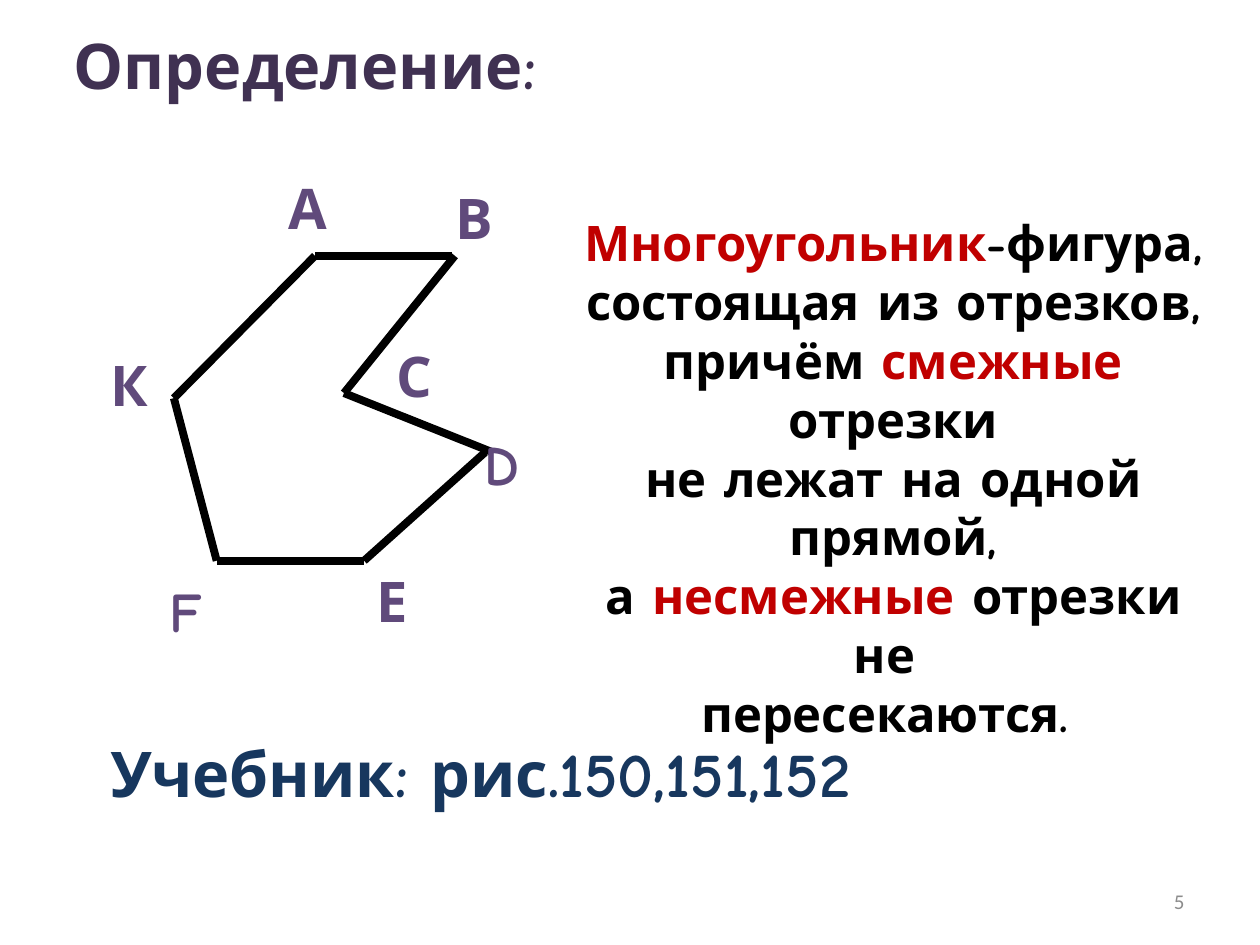
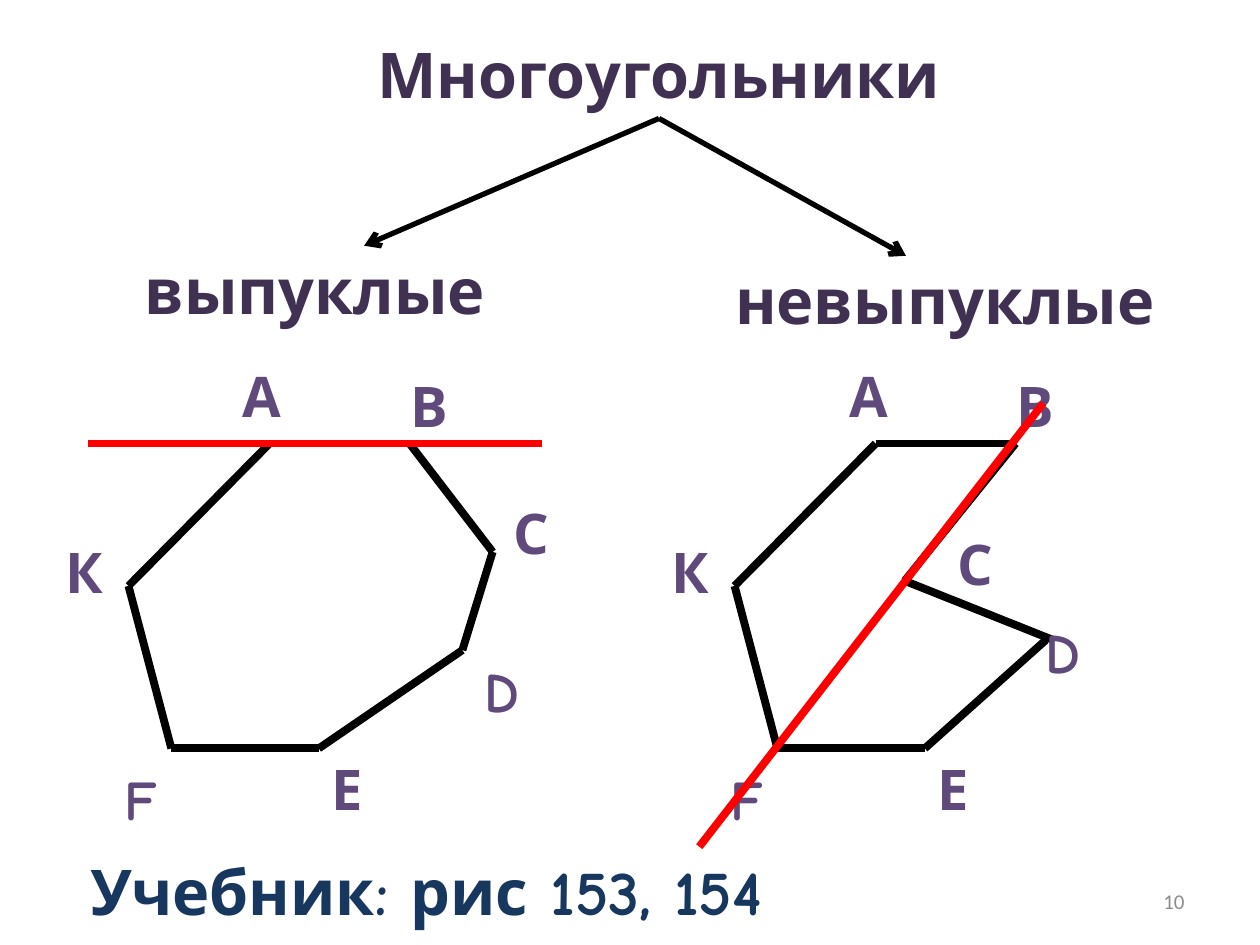
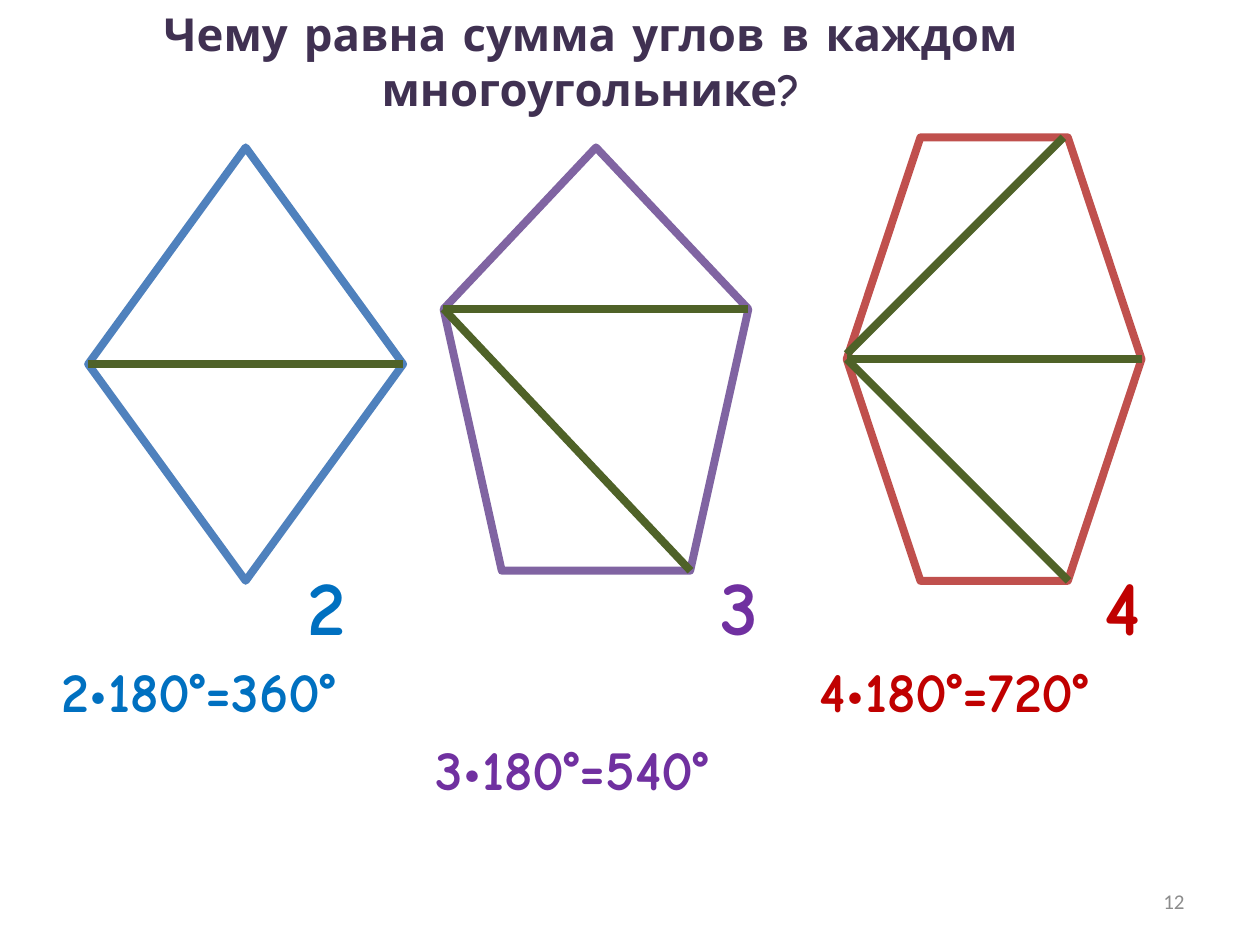
from lxml.etree import SubElement
from pptx import Presentation
from pptx.dml.color import RGBColor
from pptx.enum.shapes import MSO_CONNECTOR, MSO_SHAPE
from pptx.enum.text import MSO_ANCHOR, MSO_AUTO_SIZE, PP_ALIGN
from pptx.oxml.ns import qn
from pptx.util import Inches, Pt

# Shared style
FONT = "Comic Neue"
TITLE, LETTER, BOOK = "403152", "604A7B", "17375E"
BLACK, WHITE, RED, GREY = "000000", "FFFFFF", "C00000", "8C8C8C"
SECANT, DIAGONAL = "FF0000", "4F6228"
THICK, THIN = 4.5, 3

# Polygon content, in the coordinates of the first slide
SHARED_EDGES = [((2.5, 2.03), (1.38, 3.16)), ((1.38, 3.16), (1.72, 4.45)),
                ((1.72, 4.45), (2.89, 4.45))]
CONCAVE_EDGES = SHARED_EDGES + [
    ((2.89, 4.45), (3.85, 3.59)), ((3.91, 3.59), (2.73, 3.12)),
    ((2.5, 2.03), (3.59, 2.03)), ((3.61, 2.03), (2.73, 3.12))]
CONVEX_EDGES = SHARED_EDGES + [
    ((2.89, 4.45), (4.03, 3.67)), ((4.03, 3.67), (4.27, 2.89)),
    ((2.47, 2.03), (3.64, 2.03)), ((3.61, 2.03), (4.27, 2.89))]
SHARED_LETTERS = {"А": (2.19, 1.33), "В": (3.52, 1.41), "Е": (2.89, 4.45),
                  "F": (1.25, 4.53), "К": (0.78, 2.73)}
CONCAVE_LETTERS = SHARED_LETTERS | {"С": (3.05, 2.66), "D": (3.75, 3.36)}
CONVEX_LETTERS = SHARED_LETTERS | {"С": (4.34, 2.42), "D": (4.11, 3.67)}
LETTER_WIDTHS = {"А": 0.53, "D": 0.53, "F": 0.47, "К": 0.49}

DEFINITION = [
    [("Многоугольник", RED), ("-фигура,", BLACK)],
    [("состоящая из отрезков,", BLACK)],
    [("причём ", BLACK), ("смежные ", RED), ("отрезки", BLACK)],
    [("не лежат на одной прямой,", BLACK)],
    [("а ", BLACK), ("несмежные", RED), (" отрезки не ", BLACK)],
    [("пересекаются. ", BLACK)],
]

# Classification: heading, its box, arrow tip
KINDS = [("выпуклые", (0.47, 1.95), (2.89, 1.95)),
         ("невыпуклые", (5.47, 2.03), (7.19, 2.03))]
ARROW_START = (5.23, 0.94)
SECANTS = [((0.7, 3.52), (4.3, 3.52)), ((5.55, 6.72), (8.28, 3.2))]

# Angle sums: preset, box, outline, text colour, triangles, count x, sum place
FIGURES = [
    (MSO_SHAPE.DIAMOND, (0.7, 1.17, 2.5, 3.44), "4F81BD", "0070C0", 2, 2.34, (0.39, 5.16)),
    (MSO_SHAPE.REGULAR_PENTAGON, (3.52, 1.17, 2.42, 3.36), "8064A2", "7030A0", 3, 5.62,
     (3.36, 5.78)),
    (MSO_SHAPE.HEXAGON, (6.72, 1.09, 2.34, 3.52), "C0504D", RED, 4, 8.67, (6.41, 5.16)),
]
DIAGONALS = [((0.7, 2.89), (3.2, 2.89)),
             ((3.52, 2.45), (5.94, 2.45)), ((3.52, 2.45), (5.48, 4.53)),
             ((6.72, 2.81), (8.44, 1.09)), ((6.72, 2.85), (9.06, 2.85)),
             ((6.72, 2.85), (8.48, 4.61))]


def rgb(value):
    return RGBColor.from_string(value)


def add_text(s, box, paragraphs, size, color=BLACK, align=None, wrap=True,
             font=FONT, bold=True, grow=True):
    """Paragraphs are a string or lists of (text, colour) runs."""
    if isinstance(paragraphs, str):
        paragraphs = [[(paragraphs, color)]]
    tf = s.shapes.add_textbox(*map(Inches, box)).text_frame
    tf.word_wrap = wrap
    if grow:
        tf.auto_size = MSO_AUTO_SIZE.SHAPE_TO_FIT_TEXT
    else:
        tf.vertical_anchor = MSO_ANCHOR.MIDDLE
    for i, runs in enumerate(paragraphs):
        p = tf.add_paragraph() if i else tf.paragraphs[0]
        p.alignment = align
        p.font.name, p.font.size, p.font.bold = font, Pt(size), bold
        for text, run_color in runs:
            r = p.add_run()
            r.text = text
            r.font.color.rgb = rgb(run_color)


def add_heading(s, box, text, size=36):
    add_text(s, box, text, size, TITLE, PP_ALIGN.CENTER)


def add_line(s, start, end, color=BLACK, width=THICK, arrow=False):
    line = s.shapes.add_connector(MSO_CONNECTOR.STRAIGHT, *map(Inches, start + end))
    line.line.color.rgb = rgb(color)
    line.line.width = Pt(width)
    if arrow:
        SubElement(line.line._get_or_add_ln(), qn("a:tailEnd"), type="arrow")
    SubElement(line._element.spPr, qn("a:effectLst"))


def add_polygon(s, edges, letters, dx=0, dy=0):
    for (x1, y1), (x2, y2) in edges:
        add_line(s, (x1 + dx, y1 + dy), (x2 + dx, y2 + dy))
    for letter, (x, y) in letters.items():
        box = (x + dx, y + dy, LETTER_WIDTHS.get(letter, 0.48), 0.64)
        add_text(s, box, letter, 32, LETTER, wrap=False)


def add_slide(prs, number):
    s = prs.slides.add_slide(prs.slide_layouts[6])
    add_text(s, (7.17, 6.95, 2.33, 0.4), number, 12, GREY, PP_ALIGN.RIGHT,
             font="Calibri", bold=False, grow=False)
    return s


def definition_slide(prs):
    s = add_slide(prs, "5")
    add_heading(s, (0.31, 0.16, 4.22, 0.71), "Определение:")
    add_polygon(s, CONCAVE_EDGES, CONCAVE_LETTERS)
    add_text(s, (4.45, 1.64, 5.28, 3.4), DEFINITION, 28, align=PP_ALIGN.CENTER)
    add_text(s, (0.78, 5.78, 7.97, 0.71), "Учебник: рис.150,151,152", 36, BOOK)


def kinds_slide(prs):
    s = add_slide(prs, "10")
    add_heading(s, (1.48, 0.23, 7.5, 0.71), "Многоугольники")
    for name, place, tip in KINDS:
        add_line(s, ARROW_START, tip, width=THIN, arrow=True)
        add_heading(s, place + (4.06, 0.71), name)
    add_polygon(s, CONCAVE_EDGES, CONCAVE_LETTERS, 4.45, 1.49)
    add_polygon(s, CONVEX_EDGES, CONVEX_LETTERS, -0.36, 1.49)
    for start, end in SECANTS:
        add_line(s, start, end, SECANT)
    add_text(s, (0.62, 6.72, 6.25, 0.71), "Учебник: рис 153, 154", 36, BOOK)


def angle_sum_slide(prs):
    s = add_slide(prs, "12")
    add_heading(s, (0.16, 0, 9.06, 0.98),
                "Чему равна сумма углов в каждом многоугольнике?", 26)
    for preset, box, outline, color, count, count_x, sum_place in FIGURES:
        figure = s.shapes.add_shape(preset, *map(Inches, box))
        figure.shadow.inherit = False
        figure.fill.solid()
        figure.fill.fore_color.rgb = rgb(WHITE)
        figure.line.color.rgb = rgb(outline)
        figure.line.width = Pt(THICK)
        add_text(s, (count_x, 4.38, 0.86, 0.84), str(count), 44, color)
        add_text(s, sum_place + (3.2, 0.64), f"{count}•180°={count * 180}°", 32, color)
    for start, end in DIAGONALS:
        add_line(s, start, end, DIAGONAL)


def main():
    prs = Presentation()
    prs.slide_width, prs.slide_height = Inches(10), Inches(7.5)
    definition_slide(prs)
    kinds_slide(prs)
    angle_sum_slide(prs)
    prs.save("out.pptx")


if __name__ == "__main__":
    main()
